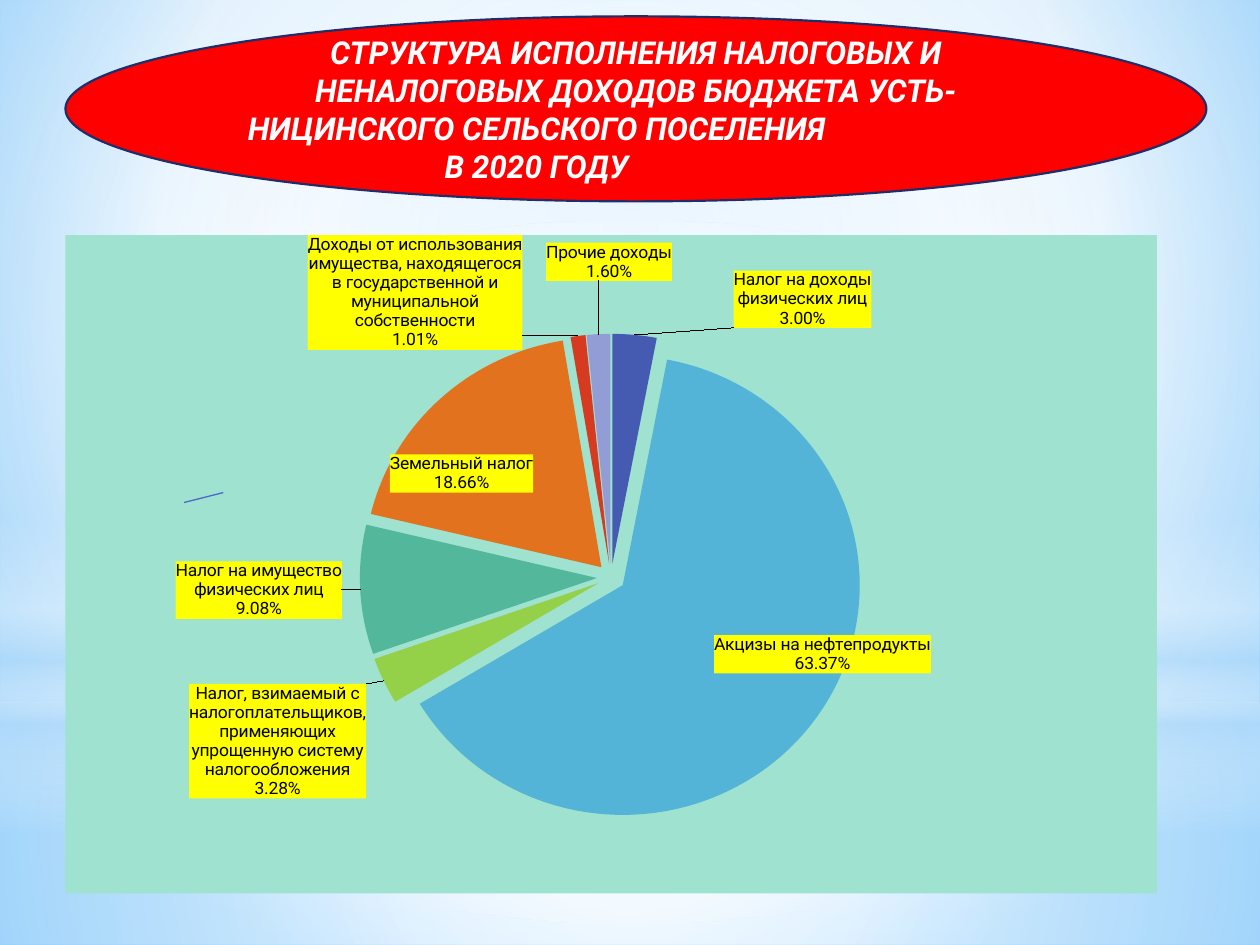
from lxml.etree import SubElement
from pptx import Presentation
from pptx.chart.data import CategoryChartData
from pptx.dml.color import RGBColor
from pptx.enum.chart import XL_CHART_TYPE
from pptx.enum.shapes import MSO_CONNECTOR, MSO_SHAPE
from pptx.enum.text import MSO_ANCHOR, PP_ALIGN
from pptx.oxml import parse_xml
from pptx.oxml.ns import nsdecls, qn
from pptx.util import Cm, Pt

FONT = "Roboto"
COLORS = {
    "white": "FFFFFF", "black": "000000", "sky": "9ED5FF", "azure": "5BB9FF",
    "haze": "B4DCFA", "red": "FF0000", "navy": "1F2E69", "blue": "4E67C8",
    "mint": "9EE2CF", "yellow": "FFFF00",
}
# category, share in percent, slice colour, label shift as a fraction of the chart
INCOME = [
    ("Налог на доходы физических лиц", 3, "455BB1", (0.09, 0)),
    ("Акцизы на нефтепродукты", 63.37, "53B4D8", (-0.1, -0.13)),
    ("Налог, взимаемый с налогоплательщиков, применяющих упрощенную систему "
     "налогообложения", 3.28, "94D048", (-0.01, 0)),
    ("Налог на имущество физических лиц", 9.08, "53B79C", (-0.01, 0)),
    ("Земельный налог", 18.66, "E2721D", (0.09, 0.15)),
    ("Доходы от использования имущества, находящегося в государственной и "
     "муниципальной собственности", 1.01, "D63A20", (-0.05, 0.02)),
    ("Прочие доходы", 1.6, "929DD6", (0.01, -0.07)),
]
TITLE = [
    ("СТРУКТУРА ИСПОЛНЕНИЯ НАЛОГОВЫХ И НЕНАЛОГОВЫХ ДОХОДОВ БЮДЖЕТА УСТЬ-", 0),
    ("НИЦИНСКОГО СЕЛЬСКОГО ПОСЕЛЕНИЯ", 4),
    ("В 2020 ГОДУ", 0),
]


def rgb(name):
    return RGBColor.from_string(COLORS[name])


def set_gradient(fill, holder, stops, focus=None):
    """Give holder a gradient: round towards focus (l, t, r, b), else downwards."""
    fill.solid()
    gs = "".join(
        f'<a:gs pos="{pos * 1000}"><a:srgbClr val="{COLORS[name]}">'
        f'<a:alpha val="{alpha * 1000}"/></a:srgbClr></a:gs>'
        for pos, name, alpha in stops)
    if focus:
        sides = " ".join(f'{k}="{v * 1000}"' for k, v in zip("ltrb", focus))
        way = f'<a:path path="circle"><a:fillToRect {sides}/></a:path>'
    else:
        way = '<a:lin ang="5400000" scaled="0"/>'
    old = holder.find(".//" + qn("a:solidFill"))
    old.getparent().replace(old, parse_xml(
        f'<a:gradFill {nsdecls("a")} rotWithShape="1"><a:gsLst>{gs}</a:gsLst>{way}</a:gradFill>'))


def add_backdrop(s, width):
    bg = s.background.fill
    bg.solid()
    set_gradient(bg, s._element.find(".//" + qn("p:bg")),
                 [(0, "sky", 100), (60, "white", 100), (100, "azure", 100)],
                 (20, 10, 20, 60))
    center = (50, 50, 50, 50)
    layers = [
        (MSO_SHAPE.RECTANGLE, 14.17, 4.88, center,
         [(0, "white", 91), (37, "white", 76), (100, "haze", 79)]),
        (MSO_SHAPE.RECTANGLE, 0, 14.17, center,
         [(0, "white", 89), (48, "white", 62), (100, "haze", 79)]),
        (MSO_SHAPE.RECTANGLE, 10.46, 6.35, None,
         [(0, "white", 0), (29, "white", 30), (45, "haze", 40),
          (55, "white", 26), (65, "haze", 60), (100, "white", 0)]),
        (MSO_SHAPE.OVAL, 4.45, 14.17, center, [(0, "white", 100), (56, "white", 0)]),
    ]
    for kind, top, height, focus, stops in layers:
        sp = s.shapes.add_shape(kind, 0, Cm(top), width, Cm(height))
        sp.shadow.inherit = False
        sp.line.fill.background()
        set_gradient(sp.fill, sp._element.spPr, stops, focus)


def layout_xml(x, y, extra=""):
    return (f'<c:layout {nsdecls("c")}><c:manualLayout>{extra}<c:x val="{x}"/><c:y val="{y}"/>'
            '{size}</c:manualLayout></c:layout>')


def labels_xml():
    """Yellow category and percent labels, each moved by its own shift."""
    look = (
        '<c:numFmt formatCode="0.00%" sourceLinked="0"/>'
        f'<c:spPr><a:solidFill><a:srgbClr val="{COLORS["yellow"]}"/></a:solidFill></c:spPr>'
        '<c:txPr><a:bodyPr/><a:p><a:pPr><a:defRPr sz="1000"><a:solidFill>'
        f'<a:srgbClr val="{COLORS["black"]}"/></a:solidFill><a:latin typeface="{FONT}"/>'
        '</a:defRPr></a:pPr><a:endParaRPr lang="ru-RU"/></a:p></c:txPr>'
        '<c:dLblPos val="outEnd"/><c:showLegendKey val="0"/><c:showVal val="0"/>'
        '<c:showCatName val="1"/><c:showSerName val="0"/><c:showPercent val="1"/>'
        '<c:showBubbleSize val="0"/><c:separator>\n</c:separator>')
    single = "".join(
        f'<c:dLbl><c:idx val="{i}"/>{layout_xml(*shift).format(size="")}{look}</c:dLbl>'
        for i, (_, _, _, shift) in enumerate(INCOME))
    return (f'<c:dLbls {nsdecls("c", "a")}>{single}{look}'
            '<c:showLeaderLines val="1"/></c:dLbls>')


def add_income_chart(s, left, top, width, height):
    data = CategoryChartData()
    data.categories = [row[0] for row in INCOME]
    data.add_series("Series 1", [row[1] for row in INCOME])
    chart = s.shapes.add_chart(XL_CHART_TYPE.PIE, left, top, width, height, data).chart
    chart.has_legend = False
    chart.has_title = False
    chart.font.size = Pt(18)
    chart.font.name = FONT
    chart.font.color.rgb = rgb("black")
    plot = chart.plots[0]
    plot.vary_by_categories = True

    space = chart._chartSpace
    space.find(qn("c:txPr")).addprevious(parse_xml(
        f'<c:spPr {nsdecls("c", "a")}><a:solidFill><a:srgbClr val="{COLORS["mint"]}"/>'
        '</a:solidFill><a:ln><a:noFill/></a:ln></c:spPr>'))
    area = space.find(".//" + qn("c:plotArea"))
    for old in area.findall(qn("c:layout")):
        area.remove(old)
    inner = ('<c:layoutTarget val="inner"/><c:xMode val="edge"/><c:yMode val="edge"/>')
    area.insert(0, parse_xml(layout_xml(0.08, 0.15, inner).format(
        size='<c:w val="0.84"/><c:h val="0.74"/>')))

    series = plot.series[0]
    ser = series._element
    ser.find(qn("c:tx")).addnext(parse_xml(f'<c:explosion {nsdecls("c")} val="6"/>'))
    for i, (_, _, color, _) in enumerate(INCOME):
        form = series.points[i].format
        form.fill.solid()
        form.fill.fore_color.rgb = RGBColor.from_string(color)
        form.line.fill.background()
    for old in ser.findall(qn("c:dLbls")):
        ser.remove(old)
    ser.find(qn("c:cat")).addprevious(parse_xml(labels_xml()))


def add_title_oval(s, left, top, width, height):
    sp = s.shapes.add_shape(MSO_SHAPE.OVAL, left, top, width, height)
    sp.shadow.inherit = False
    sp.fill.solid()
    sp.fill.fore_color.rgb = rgb("red")
    sp.line.color.rgb = rgb("navy")
    sp.line.width = Pt(1.25)
    tf = sp.text_frame
    tf.word_wrap = True
    tf.vertical_anchor = MSO_ANCHOR.MIDDLE
    for i, (text, right_margin) in enumerate(TITLE):
        p = tf.paragraphs[0] if i == 0 else tf.add_paragraph()
        p.text = text
        p.alignment = PP_ALIGN.CENTER
        p.font.size = Pt(18)
        p.font.name = FONT
        p.font.bold = p.font.italic = True
        p.font.color.rgb = rgb("white")
        if right_margin:
            p._p.get_or_add_pPr().set("marR", str(Cm(right_margin)))


def add_dash(s, left, top, width, height):
    """Short rising line inside the given box."""
    line = s.shapes.add_connector(MSO_CONNECTOR.STRAIGHT, left, top + height, left + width, top)
    line.line.color.rgb = rgb("blue")
    line.line.width = Pt(0.75)
    SubElement(line._element.spPr, qn("a:effectLst"))


def main():
    prs = Presentation()
    prs.slide_width, prs.slide_height = Cm(25.4), Cm(19.05)
    s = prs.slides.add_slide(prs.slide_layouts[6])
    add_backdrop(s, prs.slide_width)
    add_income_chart(s, Cm(1.32), Cm(4.32), Cm(22), Cm(13.69))
    add_title_oval(s, Cm(1.32), Cm(0.33), Cm(23), Cm(3.73))
    add_dash(s, Cm(3.71), Cm(9.93), Cm(0.79), Cm(0.2))
    prs.save("out.pptx")


if __name__ == "__main__":
    main()
